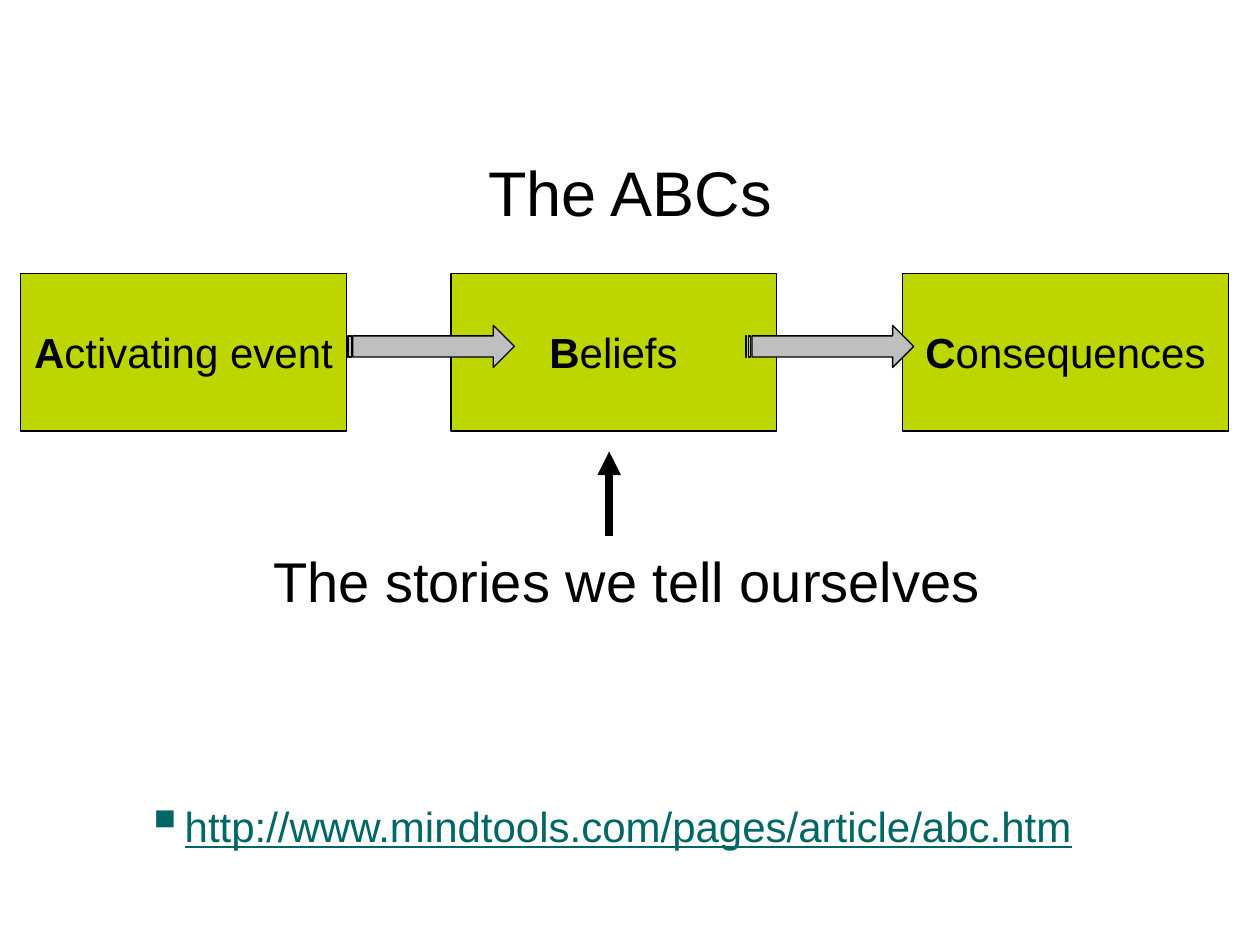
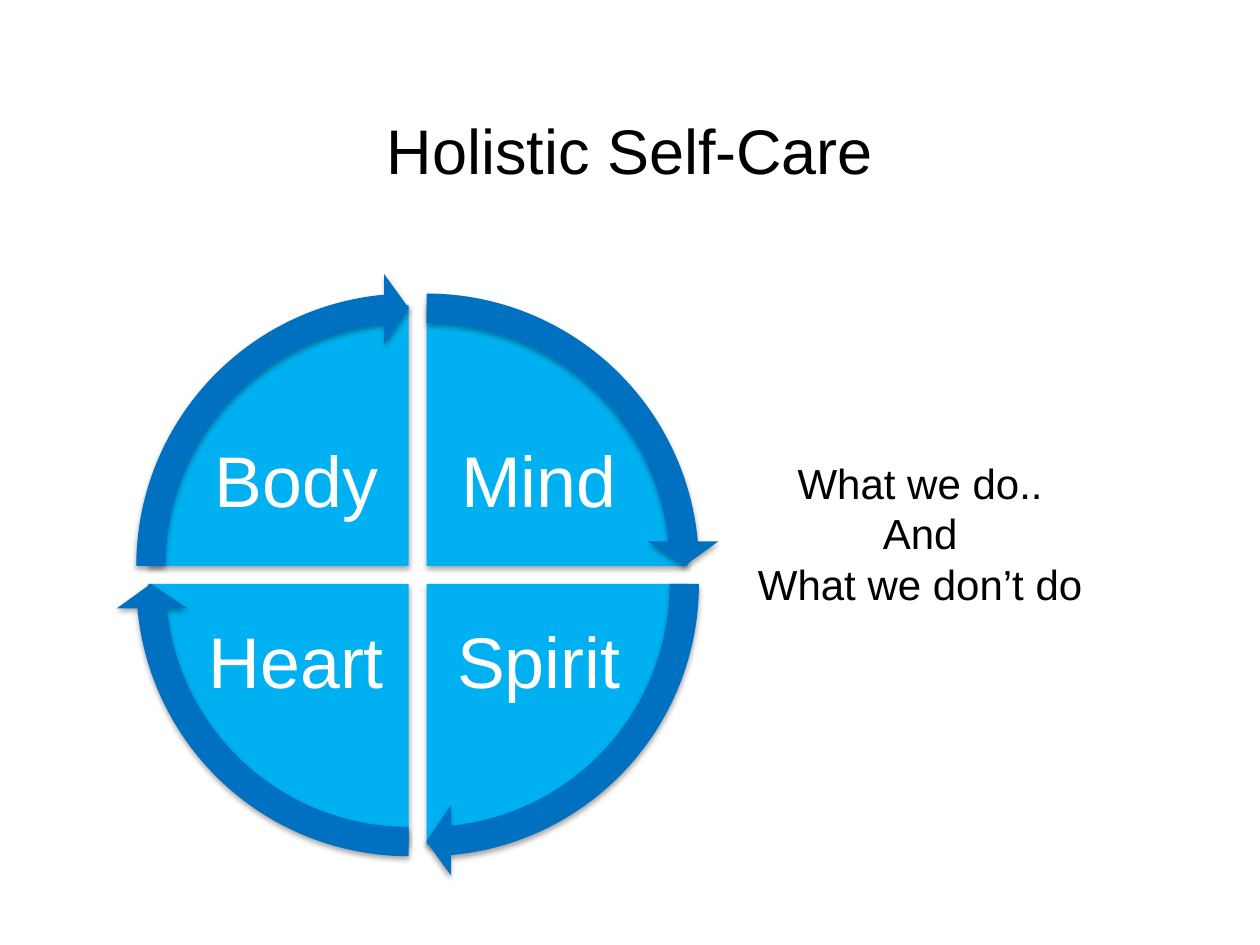
import pptx
import pptx.dml.color
import pptx.enum.shapes
import pptx.enum.text
import pptx.oxml.ns
import pptx.util
from dataclasses import dataclass
from lxml import etree

Cm = pptx.util.Cm
Pt = pptx.util.Pt
SHAPE = pptx.enum.shapes.MSO_SHAPE
ANCHOR = pptx.enum.text.MSO_ANCHOR
CENTER = pptx.enum.text.PP_ALIGN.CENTER
qn = pptx.oxml.ns.qn


@dataclass(frozen=True)
class Theme:
    font: str = "Arial"
    ink: str = "000000"
    white: str = "FFFFFF"
    lime: str = "BED600"
    grey: str = "BFBFBF"
    link: str = "006666"
    wedge: str = "00B0F0"
    cycle: str = "0070C0"
    title: float = 36
    statement: float = 32
    body: float = 24
    wheel: float = 41
    outline: float = 0.75
    pointer: float = 4.5


THEME = Theme()


def rgb(value):
    return pptx.dml.color.RGBColor.from_string(value)


def add_run(paragraph, text, size, color=THEME.ink, bold=False, underline=False):
    paragraph.alignment = CENTER
    run = paragraph.add_run()
    run.text = text
    font = run.font
    font.name, font.size, font.bold, font.underline = THEME.font, Pt(size), bold, underline
    font.color.rgb = rgb(color)


def paint(shape, fill, line=None):
    shape.shadow.inherit = False
    shape.fill.solid()
    shape.fill.fore_color.rgb = rgb(fill)
    if line:
        shape.line.color.rgb = rgb(line)
        shape.line.width = Pt(THEME.outline)
    else:
        shape.line.fill.background()


def add_soft_shadow(shape):
    """Fill the empty effect list left by paint() with a short downward shadow."""
    effects = shape._element.spPr.find(qn("a:effectLst"))
    shadow = etree.SubElement(effects, qn("a:outerShdw"), blurRad="40000", dist="23000",
                              dir="5400000", rotWithShape="0")
    color = etree.SubElement(shadow, qn("a:srgbClr"), val=THEME.ink)
    etree.SubElement(color, qn("a:alpha"), val="35000")


def add_titled_slide(prs, text, top):
    slide = prs.slides.add_slide(prs.slide_layouts[5])
    title = slide.shapes.title
    title.left, title.top, title.width, title.height = Cm(1.27), Cm(top), Cm(22.86), Cm(2.74)
    frame = title.text_frame
    frame.auto_size = pptx.enum.text.MSO_AUTO_SIZE.NONE
    frame.vertical_anchor = ANCHOR.TOP
    add_run(frame.paragraphs[0], text, THEME.title)
    return slide


def add_text(slide, box, lines, size):
    frame = slide.shapes.add_textbox(*map(Cm, box)).text_frame
    frame.word_wrap = False
    for index, line in enumerate(lines):
        paragraph = frame.add_paragraph() if index else frame.paragraphs[0]
        add_run(paragraph, line, size)


def add_stage(slide, left, top, width, height, name):
    """Add a box whose label starts with a bold initial."""
    stage = slide.shapes.add_shape(SHAPE.RECTANGLE, Cm(left), Cm(top), Cm(width), Cm(height))
    paint(stage, THEME.lime, THEME.ink)
    frame = stage.text_frame
    frame.word_wrap = False
    frame.vertical_anchor = ANCHOR.MIDDLE
    add_run(frame.paragraphs[0], name[0], THEME.body, bold=True)
    add_run(frame.paragraphs[0], name[1:], THEME.body)


def add_abc_chain(slide, left, top):
    width, height = 6.56, 3.18
    stages = (("Activating event", 0), ("Beliefs", 8.67), ("Consequences", 17.78))
    for name, offset in stages:
        add_stage(slide, left + offset, top, width, height, name)
    for offset in (width, 14.61):
        arrow = slide.shapes.add_shape(SHAPE.STRIPED_RIGHT_ARROW, Cm(left + offset),
                                       Cm(top + 1.05), Cm(3.39), Cm(0.85))
        paint(arrow, THEME.grey, THEME.ink)


def add_pointer(slide, x, bottom, top):
    pointer = slide.shapes.add_connector(pptx.enum.shapes.MSO_CONNECTOR.STRAIGHT,
                                         Cm(x), Cm(bottom), Cm(x), Cm(top))
    pointer.line.color.rgb = rgb(THEME.ink)
    pointer.line.width = Pt(THEME.pointer)
    etree.SubElement(pointer.line._get_or_add_ln(), qn("a:tailEnd"), type="triangle")
    etree.SubElement(pointer._element.spPr, qn("a:effectLst"))


def add_reference(slide, box, address):
    frame = slide.shapes.add_textbox(*map(Cm, box)).text_frame
    frame.word_wrap = True
    paragraph = frame.paragraphs[0]
    properties = paragraph._p.get_or_add_pPr()
    etree.SubElement(properties, qn("a:buSzPct"), val="125000")
    etree.SubElement(properties, qn("a:buChar"), char="▪")
    add_run(paragraph, address, THEME.body, THEME.link, underline=True)


def bend_first_edge(freeform):
    """Turn the first three segments of the outline into one Bézier curve."""
    segments = list(freeform._element.iter(qn("a:lnTo")))[:3]
    curve = etree.Element(qn("a:cubicBezTo"))
    segments[0].addprevious(curve)
    for segment in segments:
        curve.append(segment[0])
        segment.getparent().remove(segment)


def add_wedge(slide, apex_x, apex_y, radius, right, down, name):
    """Add a quarter disc; right and down are 1 or -1 and say which way it opens."""
    def place(across, along):
        return Cm(apex_x + right * radius * across), Cm(apex_y + down * radius * along)

    bend = 0.55  # control distance of a Bézier quarter circle
    builder = slide.shapes.build_freeform(*place(1, 0))
    builder.add_line_segments([place(1, bend), place(bend, 1), place(0, 1), place(0, 0)],
                              close=True)
    wedge = builder.convert_to_shape()
    bend_first_edge(wedge)
    paint(wedge, THEME.wedge)
    add_soft_shadow(wedge)

    frame = wedge.text_frame
    frame.word_wrap = True
    frame.vertical_anchor = ANCHOR.MIDDLE
    sides, ends = (Cm(0.46), Cm(1.19)), (Cm(0.33), Cm(2.31))
    frame.margin_left, frame.margin_right = sides[::right]
    frame.margin_top, frame.margin_bottom = ends[::down]
    frame.paragraphs[0].line_spacing = 0.9
    add_run(frame.paragraphs[0], name, THEME.wheel, THEME.white)


def add_cycle_arrow(slide, apex_x, apex_y, size, quarter):
    """Add an arrow along the quarter, counted clockwise from the top right."""
    arrow = slide.shapes.add_shape(SHAPE.CIRCULAR_ARROW, Cm(apex_x - size / 2),
                                   Cm(apex_y - size / 2), Cm(size), Cm(size))
    start = (162 + 54 * quarter) % 216  # 54 units make a right angle
    for index, value in enumerate((0.05, 3.28, start + 50.73, start, 0.06)):
        arrow.adjustments[index] = value
    paint(arrow, THEME.cycle)
    add_soft_shadow(arrow)


def add_care_wheel(slide, center_x, center_y):
    radius, half_gap, arrow_size = 5.26, 0.18, 11.81
    quarters = (("Mind", 1, -1), ("Spirit", 1, 1), ("Heart", -1, 1), ("Body", -1, -1))
    apexes = [(center_x + half_gap * right, center_y + half_gap * down)
              for _, right, down in quarters]
    for apex, (name, right, down) in zip(apexes, quarters):
        add_wedge(slide, *apex, radius, right, down, name)
    for quarter, apex in enumerate(apexes):
        add_cycle_arrow(slide, *apex, arrow_size, quarter)


def build_abc_slide(prs):
    slide = add_titled_slide(prs, "The ABCs", 2.96)
    add_abc_chain(slide, 0.42, 5.51)
    add_pointer(slide, 12.28, 10.8, 9.1)
    add_text(slide, (5.2, 10.9, 14.88, 1.62), ["The stories we tell ourselves"],
             THEME.statement)
    add_reference(slide, (0.42, 16.01, 23.7, 1.27),
                  "http://www.mindtools.com/pages/article/abc.htm")


def build_self_care_slide(prs):
    slide = add_titled_slide(prs, "Holistic Self-Care", 2.12)
    add_care_wheel(slide, 8.42, 11.59)
    add_text(slide, (15, 9.1, 7.1, 3.33),
             ["What we do..", "And", "What we don’t do"], THEME.body)


def main():
    prs = pptx.Presentation()
    prs.slide_width, prs.slide_height = Cm(25.4), Cm(19.05)
    build_abc_slide(prs)
    build_self_care_slide(prs)
    prs.save("out.pptx")


if __name__ == "__main__":
    main()
